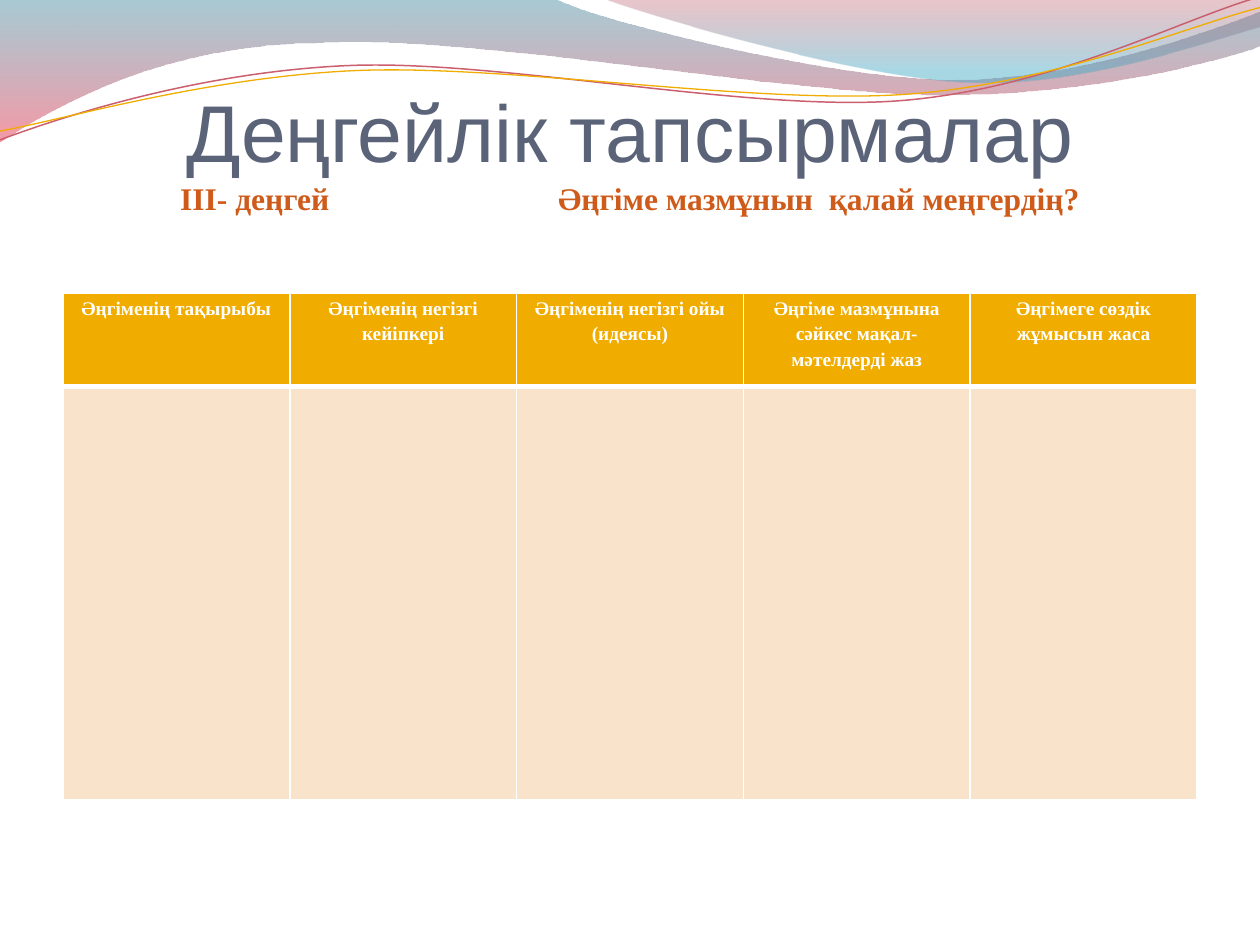
import dataclasses
import math

import pptx
import pptx.dml.color
import pptx.enum.text
import pptx.oxml
import pptx.oxml.ns
import pptx.util
from pptx.util import Inches

WAVE_FILLS = [
    ([(0, -0.01), (4.4, -0.01),
      [(4.76, 0.17), (6.64, 0.63), (7.58, 0.63)],
      [(8.53, 0.63), (9.58, 0.26), (10, 0.09)],
      (10.01, 0.36),
      [(9.83, 0.44), (8.7, 0.76), (7.46, 0.75)],
      [(6.22, 0.75), (3.82, 0.28), (2.57, 0.34)],
      [(1.29, 0.35), (0.46, 0.83), (-0.01, 1.13)],
      (0, -0.01)],
     [(0, "3F8A9F", 45), (1, "EF445B", 55)]),
    ([(4.79, -0.01),
      [(5.09, 0.11), (6.82, 0.62), (7.69, 0.65)],
      [(8.56, 0.69), (9.61, 0.32), (10, 0.21)],
      (10, 0), (4.79, -0.01)],
     [(0, "B84253", 30), (0.8, "42ABC7", 45)]),
]
WAVE_LINES = [
    ([(0, 1.11),
      [(0.48, 0.93), (1.58, 0.57), (2.77, 0.52)],
      [(3.95, 0.47), (5.93, 0.89), (7.13, 0.8)],
      [(8.33, 0.71), (9.38, 0.15), (9.98, -0.02)]], "CB5F6E", 0.85),
    ([(0, 1.04),
      [(0.47, 0.96), (1.64, 0.61), (2.83, 0.56)],
      [(4.03, 0.51), (5.97, 0.83), (7.17, 0.75)],
      [(8.36, 0.67), (9.41, 0.21), (10, 0.06)]], "F0AD00", 0.75),
]
WAVE_TILT = -2.7
WAVE_CENTRE = (4.99, 0.58)
QUESTIONS = [
    "Әңгіменің тақырыбы",
    "Әңгіменің негізгі кейіпкері",
    "Әңгіменің негізгі ойы (идеясы)",
    "Әңгіме мазмұнына сәйкес мақал-мәтелдерді жаз",
    "Әңгімеге сөздік жұмысын жаса",
]


@dataclasses.dataclass(frozen=True)
class Theme:
    """Colours, fonts and type sizes of the slide."""
    heading: str = "5A6378"
    accent: str = "CF5B1B"
    header_fill: str = "F0AD00"
    answer_fill: str = "F9E3CB"
    white: str = "FFFFFF"
    sans: str = "Arial"
    serif: str = "Times New Roman"
    heading_size: int = 46
    level_size: int = 18
    cell_size: int = 11


def rgb(code):
    """Turn a hex code into a colour."""
    return pptx.dml.color.RGBColor.from_string(code)


def turn(point, degrees):
    """Turn a point clockwise about the centre of the thin waves."""
    angle = math.radians(degrees)
    dx, dy = (value - centre for value, centre in zip(point, WAVE_CENTRE))
    return (WAVE_CENTRE[0] + dx * math.cos(angle) - dy * math.sin(angle),
            WAVE_CENTRE[1] + dx * math.sin(angle) + dy * math.cos(angle))


class SlideBuilder:
    """Draws each kind of element on one slide in one theme."""

    def __init__(self, slide, theme):
        self.slide = slide
        self.theme = theme

    def outline(self, path, close, tilt=0):
        """Build a freeform of corners and cubic curves."""
        parts = [part if isinstance(part, list) else [part] for part in path]
        points = [tuple(map(Inches, turn(point, -tilt))) for part in parts for point in part]
        builder = self.slide.shapes.build_freeform(*points[0])
        builder.add_line_segments(points[1:], close=close)
        wave = builder.convert_to_shape()
        wave.shadow.inherit = False
        wave.rotation = tilt
        segments = iter(list(wave._element.spPr.iter(pptx.oxml.ns.qn("a:lnTo"))))
        for part in parts[1:]:
            lines = [next(segments) for _ in part]
            if len(lines) == 3:
                curve = pptx.oxml.parse_xml(f'<a:cubicBezTo {pptx.oxml.ns.nsdecls("a")}/>')
                lines[0].addprevious(curve)
                for line in lines:
                    curve.append(line[0])
                    line.getparent().remove(line)
        return wave

    def wave_fill(self, path, stops):
        """Draw a wave with a see-through vertical gradient."""
        wave = self.outline(path, True)
        wave.line.fill.background()
        wave.fill.gradient()
        wave.fill.gradient_angle = 270
        for stop, (position, colour, _) in zip(wave.fill.gradient_stops, stops):
            stop.position = position
            stop.color.rgb = rgb(colour)
        colours = wave._element.spPr.iter(pptx.oxml.ns.qn("a:srgbClr"))
        for colour, (_, _, opacity) in zip(list(colours), stops):
            colour.append(pptx.oxml.parse_xml(
                f'<a:alpha {pptx.oxml.ns.nsdecls("a")} val="{opacity * 1000}"/>'))

    def wave_line(self, path, colour, width):
        """Draw a thin open wave."""
        wave = self.outline(path, False, WAVE_TILT)
        wave.fill.background()
        wave.line.color.rgb = rgb(colour)
        wave.line.width = pptx.util.Pt(width)

    def run(self, paragraph, text, font, size, colour, bold=False):
        """Add one formatted run."""
        run = paragraph.add_run()
        run.text = text
        run.font.name = font
        run.font.size = pptx.util.Pt(size)
        run.font.color.rgb = rgb(colour)
        run.font.bold = bold

    def title(self, heading, level):
        """Fill the title with a heading and a tabbed line below it."""
        theme = self.theme
        title = self.slide.shapes.title
        self.slide.shapes._spTree.append(title._element)
        title.left, title.top, title.width, title.height = map(Inches, (0.5, 0.77, 9, 1.25))
        frame = title.text_frame
        frame.word_wrap = True
        frame.auto_size = pptx.enum.text.MSO_AUTO_SIZE.NONE
        frame.vertical_anchor = pptx.enum.text.MSO_ANCHOR.BOTTOM
        frame.margin_left = frame.margin_right = Inches(0.93)
        frame.margin_top, frame.margin_bottom = 0, Inches(0.3)
        top_line, level_line = frame.paragraphs[0], frame.add_paragraph()
        top_line.alignment = pptx.enum.text.PP_ALIGN.CENTER
        level_line.alignment = pptx.enum.text.PP_ALIGN.LEFT
        for line in (top_line, level_line):
            line.space_before = pptx.util.Pt(0)
        level_line._p.get_or_add_pPr().append(pptx.oxml.parse_xml(
            f'<a:tabLst {pptx.oxml.ns.nsdecls("a")}>'
            f'<a:tab pos="{Inches(3)}" algn="l"/></a:tabLst>'))
        self.run(top_line, heading, theme.sans, theme.heading_size, theme.heading)
        self.run(level_line, level, theme.serif, theme.level_size, theme.accent, True)

    def borders(self, cell, **widths):
        """Give a cell white borders of the given widths in points."""
        for side, width in widths.items():
            cell._tc.get_or_add_tcPr().append(pptx.oxml.parse_xml(
                f'<a:ln{side} {pptx.oxml.ns.nsdecls("a")} w="{pptx.util.Pt(width)}">'
                f'<a:solidFill><a:srgbClr val="{self.theme.white}"/></a:solidFill></a:ln{side}>'))

    def table(self, headers):
        """Draw a header row over a row of empty answer cells."""
        theme = self.theme
        table = self.slide.shapes.add_table(
            2, len(headers), Inches(0.5), Inches(2.33), Inches(9), Inches(4.02)).table
        table.rows[0].height, table.rows[1].height = Inches(0.74), Inches(3.28)
        for column, text in enumerate(headers):
            header, answer = table.cell(0, column), table.cell(1, column)
            self.borders(header, L=1, R=1, T=1, B=3)
            self.borders(answer, L=1, R=1, T=3, B=1)
            for cell, colour in ((header, theme.header_fill), (answer, theme.answer_fill)):
                cell.fill.solid()
                cell.fill.fore_color.rgb = rgb(colour)
                cell.margin_left = cell.margin_right = Inches(0.07)
                cell.margin_top = cell.margin_bottom = 0
            paragraph = header.text_frame.paragraphs[0]
            paragraph.alignment = pptx.enum.text.PP_ALIGN.CENTER
            paragraph.line_spacing = 1.2
            self.run(paragraph, text, theme.serif, theme.cell_size, theme.white, True)


def main():
    """Build the slide and save it."""
    deck = pptx.Presentation()
    deck.slide_width, deck.slide_height = Inches(10), Inches(7.5)
    builder = SlideBuilder(deck.slides.add_slide(deck.slide_layouts[5]), Theme())
    for path, stops in WAVE_FILLS:
        builder.wave_fill(path, stops)
    for path, colour, width in WAVE_LINES:
        builder.wave_line(path, colour, width)
    builder.title("Деңгейлік тапсырмалар", "ІІІ- деңгей\tӘңгіме мазмұнын  қалай меңгердің?")
    builder.table(QUESTIONS)
    deck.save("out.pptx")


if __name__ == "__main__":
    main()
